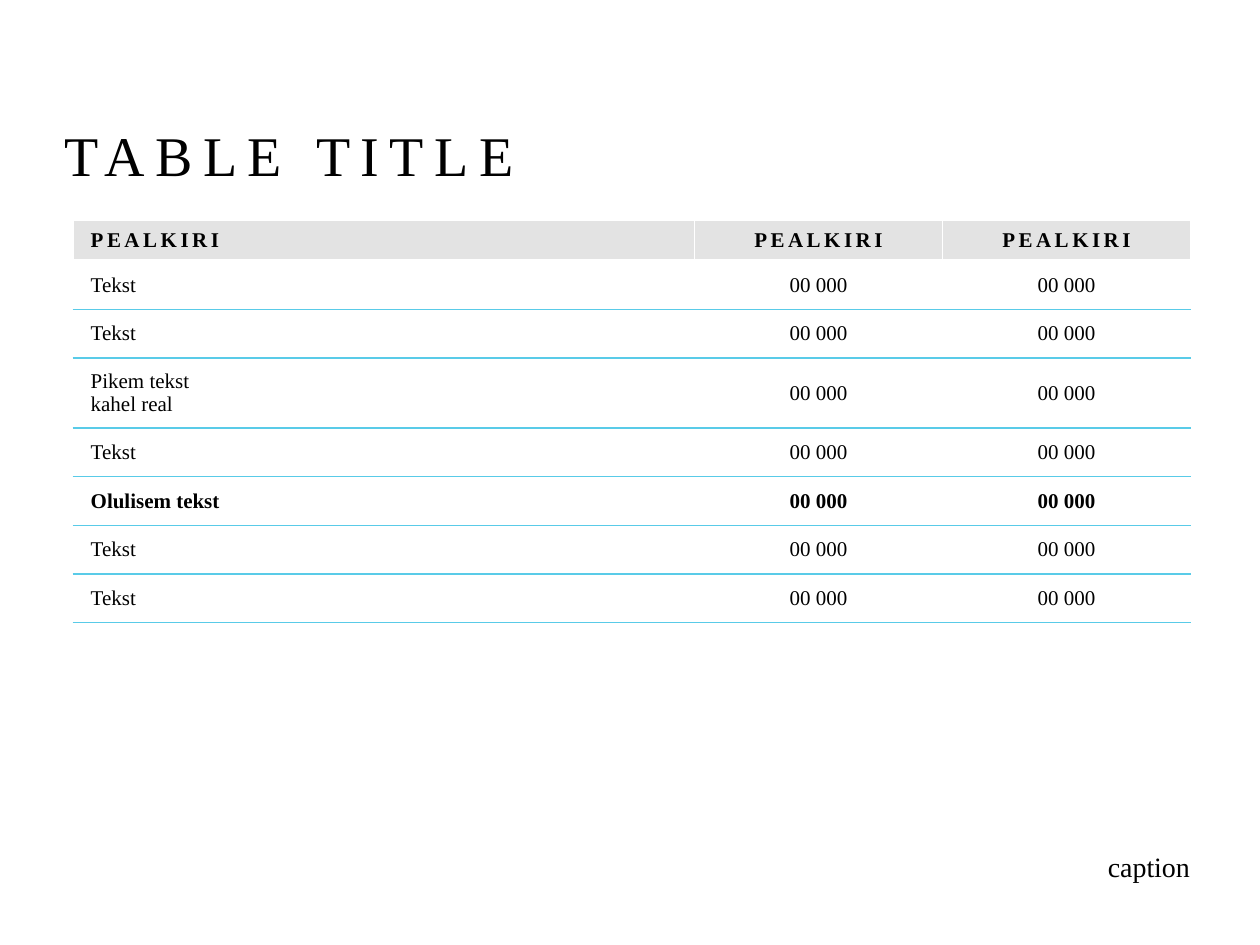
from pptx import Presentation
from pptx.dml.color import RGBColor
from pptx.enum.text import MSO_ANCHOR as Anchor, MSO_AUTO_SIZE as AutoSize, PP_ALIGN as Align
from pptx.oxml.ns import qn
from pptx.util import Cm, Pt
from lxml.etree import SubElement

BLACK = RGBColor(0x00, 0x00, 0x00)
WHITE = RGBColor(0xFF, 0xFF, 0xFF)
GREY = RGBColor(0xE3, 0xE3, 0xE3)
BLUE = RGBColor(0x59, 0xCB, 0xE8)

HEADER = ("PEALKIRI",) * 3
LABELS = ("Tekst", "Tekst", "Pikem tekst\vkahel real", "Tekst",
          "Olulisem tekst", "Tekst", "Tekst")
KEY_LABEL = "Olulisem tekst"
VALUE = "00 000"
COLUMN_WIDTHS = (12.52, 5, 5)
HEADER_HEIGHT, LINE_HEIGHT, TALL_HEIGHT = 0.81, 0.98, 1.41


class SlideBuilder:
    font = "Times New Roman"

    def __init__(self, prs):
        self.s = prs.slides.add_slide(prs.slide_layouts[5])

    def style(self, p, size, align=Align.LEFT, bold=False, spacing=0):
        p.alignment = align
        p.font.name = self.font
        p.font.size = Pt(size)
        p.font.bold = bold
        p.font.color.rgb = BLACK
        if spacing:
            for r in p.runs:
                r._r.get_or_add_rPr().set("spc", str(spacing * 100))

    def place(self, sp, left, top, width, height):
        sp.left, sp.top, sp.width, sp.height = Cm(left), Cm(top), Cm(width), Cm(height)
        tf = sp.text_frame
        tf.word_wrap = True
        tf.auto_size = AutoSize.NONE
        tf.vertical_anchor = Anchor.BOTTOM

    def title(self, text, *box):
        sp = self.s.shapes.title
        sp.text_frame.text = text
        self.place(sp, *box)
        self.style(sp.text_frame.paragraphs[0], 32, spacing=6)

    def caption(self, text, *box):
        sp = self.s.shapes.add_textbox(0, 0, 0, 0)
        sp.text_frame.text = text
        self.place(sp, *box)
        p = sp.text_frame.paragraphs[0]
        p.line_spacing = 1.2
        self.style(p, 16, Align.RIGHT)

    def borders(self, cell, top, bottom, bottom_width):
        tcPr = cell._tc.get_or_add_tcPr()
        edges = (("L", WHITE, 1), ("R", WHITE, 1), ("T", top, 1), ("B", bottom, bottom_width))
        for i, (side, color, width) in enumerate(edges):
            ln = SubElement(tcPr, qn(f"a:ln{side}"), w=str(Pt(width)))
            fill = SubElement(ln, qn("a:solidFill"))
            SubElement(fill, qn("a:srgbClr"), val=str(color))
            tcPr.remove(ln)
            tcPr.insert(i, ln)

    def cell(self, cell, text, row, col, bold):
        header = row == 0
        cell.text = text
        cell.margin_left = cell.margin_right = Cm(0.35)
        cell.margin_top = cell.margin_bottom = Cm(0.16)
        cell.vertical_anchor = Anchor.TOP if header else Anchor.MIDDLE
        if header:
            cell.fill.solid()
            cell.fill.fore_color.rgb = GREY
        else:
            cell.fill.background()
        self.borders(cell, BLUE if row > 1 else WHITE,
                     WHITE if header else BLUE, 3 if header else 1)
        self.style(cell.text_frame.paragraphs[0], 12,
                   Align.CENTER if col else Align.LEFT, bold, 2 if header else 0)

    def table(self, rows, left, top):
        heights = [HEADER_HEIGHT] + [TALL_HEIGHT if "\v" in row[0] else LINE_HEIGHT
                                     for row in rows[1:]]
        table = self.s.shapes.add_table(len(rows), len(COLUMN_WIDTHS), Cm(left), Cm(top),
                                        Cm(sum(COLUMN_WIDTHS)), Cm(sum(heights))).table
        table.first_row = False
        table.horz_banding = False
        for column, width in zip(table.columns, COLUMN_WIDTHS):
            column.width = Cm(width)
        for i, (texts, height) in enumerate(zip(rows, heights)):
            table.rows[i].height = Cm(height)
            bold = i == 0 or texts[0] == KEY_LABEL
            for j, text in enumerate(texts):
                self.cell(table.cell(i, j), text, i, j, bold)


def main():
    prs = Presentation()
    prs.slide_width, prs.slide_height = Cm(25.4), Cm(19.05)
    slide = SlideBuilder(prs)
    slide.title("TABLE TITLE", 1.04, 0.76, 23.24, 3.15)
    slide.table([HEADER] + [(label, VALUE, VALUE) for label in LABELS], 1.48, 4.45)
    slide.caption("caption", 7.65, 16.36, 16.59, 1.57)
    prs.save("out.pptx")


if __name__ == "__main__":
    main()
